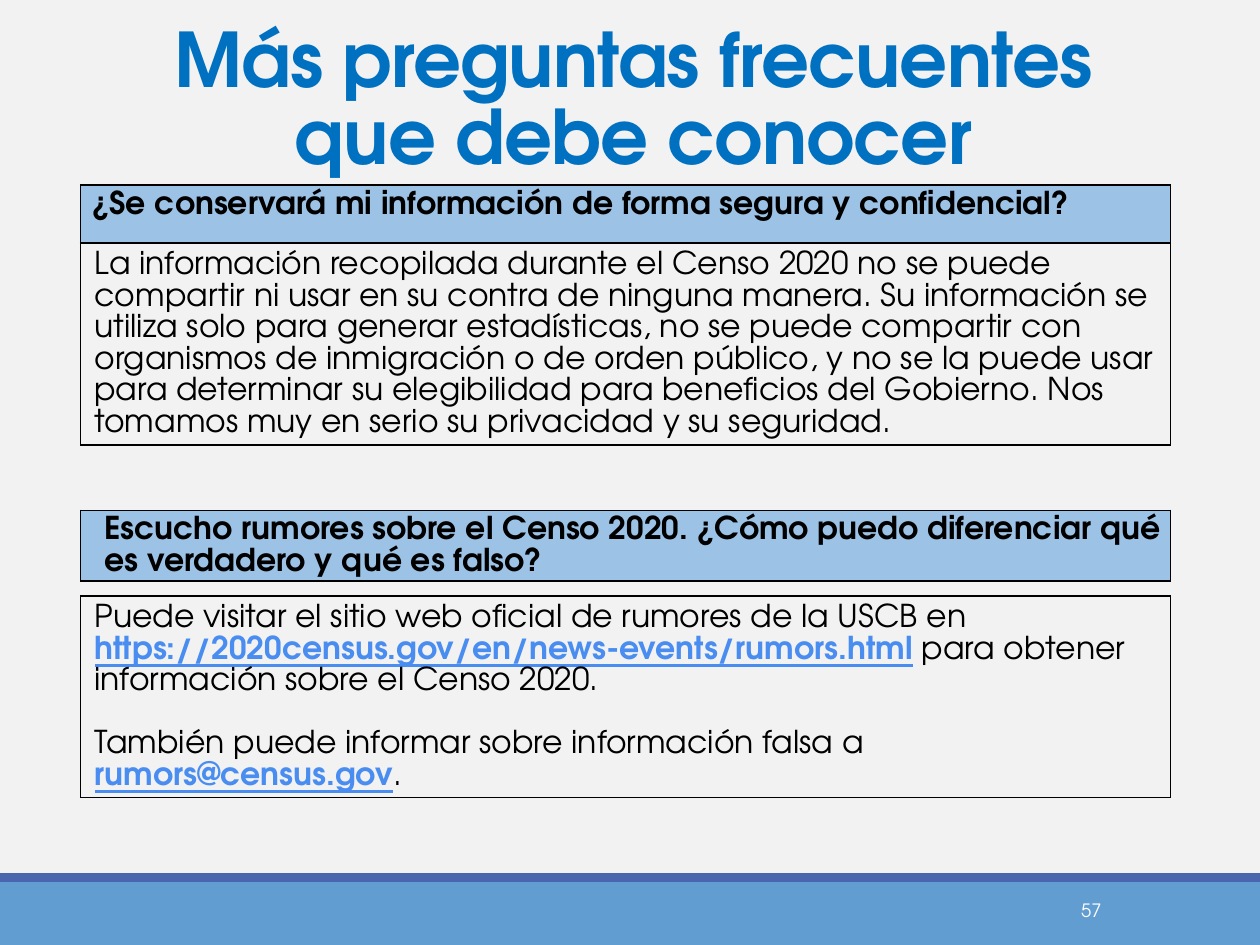
from lxml import etree
from pptx import Presentation
from pptx.dml.color import RGBColor
from pptx.enum import shapes, text
from pptx.oxml import ns
from pptx.util import Inches, Pt

# Content: each paragraph is a list of (text, is_link) runs
TITLE = "Más preguntas frecuentes que debe conocer"
PAGE_NUMBER = "57"
SAFETY_QUESTION = [[("¿Se conservará mi información de forma segura y confidencial?", False)]]
SAFETY_ANSWER = [[(
    "La información recopilada durante el Censo 2020 no se puede compartir ni usar en su "
    "contra de ninguna manera. Su información se utiliza solo para generar estadísticas, "
    "no se puede compartir con organismos de inmigración o de orden público, y no se la "
    "puede usar para determinar su elegibilidad para beneficios del Gobierno. Nos tomamos "
    "muy en serio su privacidad y su seguridad.", False)]]
RUMOR_QUESTION = [[(
    "Escucho rumores sobre el Censo 2020. ¿Cómo puedo diferenciar qué es verdadero y qué "
    "es falso?", False)]]
RUMOR_ANSWER = [
    [("Puede visitar el sitio web oficial de rumores de la USCB en ", False),
     ("https://2020census.gov/en/news-events/rumors.html", True),
     (" para obtener información sobre el Censo 2020.", False)],
    [("También puede informar sobre información falsa a ", False),
     ("rumors@census.gov", True), (".", False)],
]

# Top, height, paragraphs, is_question, indent
FAQ = [
    (1.47, 0.46, SAFETY_QUESTION, True, 0.06),
    (1.93, 1.6, SAFETY_ANSWER, False, 0.06),
    (4.05, 0.55, RUMOR_QUESTION, True, 0.16),
    (4.73, 1.6, RUMOR_ANSWER, False, 0.06),
]
FAQ_LEFT, FAQ_WIDTH = 0.64, 8.65

THEME = {
    "font": "TeX Gyre Adventor",
    "background": "F2F2F2", "band": "629DD1", "stripe": "4A66AC",
    "title": "0070C0", "question": "9CC2E5", "body": "000000",
    "link": "498DF1", "page": "FFFFFF",
    "title_size": 43, "body_size": 18, "page_size": 10.5,
}


def color(name):
    return RGBColor.from_string(THEME[name])


def add_text(paragraph, wording, *, size, ink, bold=False, underline=False):
    run = paragraph.add_run()
    run.text = wording
    font = run.font
    font.name, font.size = THEME["font"], Pt(THEME[size])
    font.bold, font.underline = bold, underline
    font.color.rgb = color(ink)
    return run


def add_band(slide, top, height, fill):
    band = slide.shapes.add_shape(shapes.MSO_SHAPE.RECTANGLE, 0, Inches(top),
                                  Inches(10), Inches(height))
    band.shadow.inherit = False
    band.fill.solid()
    band.fill.fore_color.rgb = color(fill)
    band.line.fill.background()


def add_borders(cell):
    properties = cell._tc.get_or_add_tcPr()
    for position, side in enumerate(("lnL", "lnR", "lnT", "lnB")):
        line = etree.Element(ns.qn(f"a:{side}"), w=str(Pt(1)))
        fill = etree.SubElement(line, ns.qn("a:solidFill"))
        etree.SubElement(fill, ns.qn("a:srgbClr"), val=THEME["body"])
        properties.insert(position, line)


def add_faq(slide, top, height, paragraphs, is_question, indent):
    table = slide.shapes.add_table(1, 1, Inches(FAQ_LEFT), Inches(top),
                                   Inches(FAQ_WIDTH), Inches(height)).table
    table.first_row = table.horz_banding = False
    cell = table.cell(0, 0)
    inset = Inches(0.03 if is_question else 0.05)
    cell.margin_left = cell.margin_right = inset
    cell.margin_top = cell.margin_bottom = inset
    if is_question:
        cell.fill.solid()
        cell.fill.fore_color.rgb = color("question")
    else:
        cell.fill.background()
    add_borders(cell)

    frame = cell.text_frame
    for number, runs in enumerate(paragraphs):
        paragraph = frame.add_paragraph() if number else frame.paragraphs[0]
        paragraph.line_spacing = Pt(THEME["body_size"])
        if number:
            paragraph.space_before = Pt(THEME["body_size"])
        margins = paragraph._p.get_or_add_pPr()
        margins.set("marL", str(Inches(indent)))
        margins.set("indent", "0")
        for wording, is_link in runs:
            add_text(paragraph, wording, size="body_size",
                     ink="link" if is_link else "body",
                     bold=is_question or is_link, underline=is_link)


def main():
    deck = Presentation()
    deck.slide_width, deck.slide_height = Inches(10), Inches(7.5)
    slide = deck.slides.add_slide(deck.slide_layouts[5])
    slide.background.fill.solid()
    slide.background.fill.fore_color.rgb = color("background")

    # Footer bands and page number
    add_band(slide, 7, 0.5, "band")
    add_band(slide, 6.93, 0.07, "stripe")
    page = slide.shapes.add_textbox(Inches(7.76), Inches(7.02), Inches(1.08), Inches(0.4))
    page.text_frame.word_wrap = True
    page.text_frame.vertical_anchor = text.MSO_ANCHOR.MIDDLE
    page_line = page.text_frame.paragraphs[0]
    page_line.alignment = text.PP_ALIGN.RIGHT
    add_text(page_line, PAGE_NUMBER, size="page_size", ink="page")

    # Questions and answers
    for entry in FAQ:
        add_faq(slide, *entry)

    # Title
    title = slide.shapes.title
    title.left, title.top = Inches(0.69), Inches(0.16)
    title.width, title.height = Inches(8.67), Inches(0.87)
    title.text_frame.word_wrap = True
    title.text_frame.auto_size = text.MSO_AUTO_SIZE.NONE
    title.text_frame.vertical_anchor = text.MSO_ANCHOR.TOP
    title_line = title.text_frame.paragraphs[0]
    title_line.alignment = text.PP_ALIGN.CENTER
    title_line.line_spacing = 0.85
    heading = add_text(title_line, TITLE, size="title_size", ink="title", bold=True)
    heading.font._element.set("spc", "-50")

    deck.save("out.pptx")


if __name__ == "__main__":
    main()
